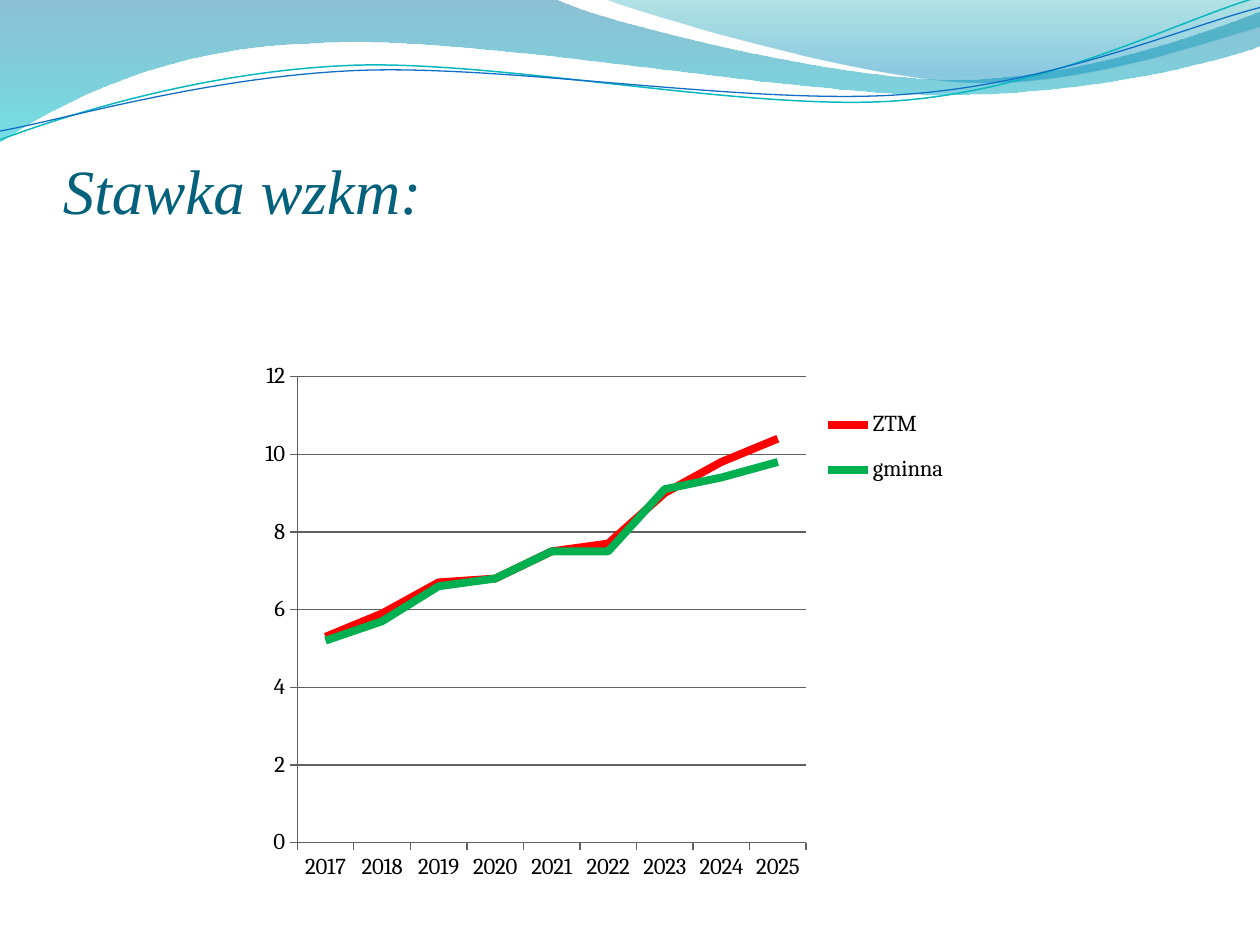
from lxml.etree import SubElement as Sub
from pptx import Presentation
from pptx.chart.data import CategoryChartData as Data
from pptx.dml.color import RGBColor
from pptx.enum.chart import XL_CHART_TYPE as Kind, XL_LEGEND_POSITION as Side, XL_TICK_MARK as Tick
from pptx.enum.text import MSO_ANCHOR as Anchor
from pptx.oxml import parse_xml
from pptx.oxml.ns import nsdecls, qn
from pptx.util import Cm, Pt

BAND = [
    [(0, 0)],
    [(4.4, -0.01)],
    [(4.76, 0.17), (6.64, 0.63), (7.58, 0.63)],
    [(8.53, 0.63), (9.58, 0.26), (10, 0.09)],
    [(10.01, 0.36)],
    [(9.83, 0.44), (8.7, 0.76), (7.46, 0.75)],
    [(6.22, 0.75), (3.82, 0.28), (2.57, 0.34)],
    [(1.29, 0.36), (0.46, 0.83), (-0.01, 1.13)],
    [(0, 0)],
]
CREST = [
    [(4.79, -0.01)],
    [(5.09, 0.11), (6.82, 0.62), (7.69, 0.65)],
    [(8.56, 0.69), (9.61, 0.32), (10, 0.21)],
    [(10, 0)],
    [(4.79, -0.01)],
]
TEAL = [
    [(0, 1.11)],
    [(0.48, 0.93), (1.58, 0.57), (2.77, 0.52)],
    [(3.95, 0.47), (5.93, 0.89), (7.13, 0.8)],
    [(8.33, 0.71), (9.38, 0.15), (9.98, -0.02)],
]
BLUE = [
    [(0, 1.04)],
    [(0.47, 0.96), (1.64, 0.61), (2.83, 0.56)],
    [(4.03, 0.51), (5.97, 0.84), (7.17, 0.75)],
    [(8.36, 0.67), (9.41, 0.21), (10, 0.06)],
]
YEARS = [str(year) for year in range(2017, 2026)]
RATES = [
    ("ZTM", "FF0000", (5.3, 5.9, 6.7, 6.8, 7.5, 7.7, 9, 9.8, 10.4)),
    ("gminna", "00B050", (5.2, 5.7, 6.6, 6.8, 7.5, 7.5, 9.1, 9.4, 9.8)),
]


def hue(code):
    return RGBColor.from_string(code)


def inch(size):
    return Cm(size * 2.54)


def trace(slide, parts, close):
    (start,), *rest = parts
    pen = slide.shapes.build_freeform(inch(start[0]), inch(start[1]))
    dots = [(inch(x), inch(y)) for part in rest for x, y in part]
    pen.add_line_segments(dots, close=close)
    shape = pen.convert_to_shape()
    shape.shadow.inherit = False
    lines = iter(list(shape.element.iter(qn("a:lnTo"))))
    for part in rest:
        group = [next(lines) for dot in part]
        if len(group) == 3:
            first, *others = group
            first.tag = qn("a:cubicBezTo")
            for line in others:
                first.append(line[0])
                line.getparent().remove(line)
    return shape


def add_wave(slide, parts, stops):
    shape = trace(slide, parts, True)
    shape.line.fill.background()
    shape.fill.gradient()
    shape.fill.gradient_angle = 270
    for stop, (place, code, alpha) in zip(shape.fill.gradient_stops, stops):
        stop.position = place
        stop.color.rgb = hue(code)
    tints = shape.element.spPr.iter(qn("a:srgbClr"))
    for tint, (place, code, alpha) in zip(tints, stops):
        Sub(tint, qn("a:alpha"), val=str(alpha * 1000))


def style_line(line, code, width):
    line.color.rgb = hue(code)
    line.width = Pt(width)


def add_curve(slide, parts, code, width):
    shape = trace(slide, parts, False)
    shape.fill.background()
    style_line(shape.line, code, width)


def add_title(slide, text):
    box = slide.shapes.add_textbox(Cm(1.27), Cm(1.95), Cm(22.86), Cm(2.62))
    frame = box.text_frame
    frame.word_wrap = True
    frame.vertical_anchor = Anchor.BOTTOM
    frame.margin_left = frame.margin_right = frame.margin_bottom = 0
    run = frame.paragraphs[0].add_run()
    run.text = text
    font = run.font
    font.name, font.size, font.italic = "Times New Roman", Pt(36), True
    font.color.rgb = hue("04617B")


def place(node, spot, rect, inner=False):
    for old in node.findall(qn("c:layout")):
        node.remove(old)
    tags = [("layoutTarget", "inner")] if inner else []
    tags += [("xMode", "edge"), ("yMode", "edge"), *zip("xywh", rect)]
    body = "".join(f'<c:{tag} val="{val}"/>' for tag, val in tags)
    node.insert(spot, parse_xml(
        f'<c:layout {nsdecls("c")}><c:manualLayout>{body}'
        '</c:manualLayout></c:layout>'))


def add_rates(slide):
    data = Data()
    data.categories = YEARS
    for name, code, vals in RATES:
        data.add_series(name, vals)
    chart = slide.shapes.add_chart(
        Kind.LINE, Cm(3.96), Cm(7.34), Cm(15.88), Cm(11.13), data).chart
    chart.has_title = False
    chart.font.name, chart.font.size = "Cambria", Pt(13)
    chart.font.color.rgb = hue("000000")
    for line, (name, code, vals) in zip(chart.plots[0].series, RATES):
        line.smooth = False
        style_line(line.format.line, code, 4.5)
    chart.plots[0].vary_by_categories = False
    for axis in (chart.category_axis, chart.value_axis):
        axis.major_tick_mark, axis.minor_tick_mark = Tick.OUTSIDE, Tick.NONE
        style_line(axis.format.line, "606060", 0.75)
    scale = chart.value_axis
    scale.minimum_scale, scale.maximum_scale, scale.major_unit = 0, 12, 2
    scale.has_major_gridlines = True
    style_line(scale.major_gridlines.format.line, "606060", 0.75)
    chart.has_legend = True
    chart.legend.position = Side.RIGHT
    chart.legend.include_in_layout = False
    area = chart.element.find(".//" + qn("c:plotArea"))
    place(area, 0, (0.128, 0.022, 0.646, 0.845), True)
    key = chart.element.find(".//" + qn("c:legend"))
    place(key, 1, (0.78, 0.05, 0.19, 0.2))


def main():
    deck = Presentation()
    deck.slide_width, deck.slide_height = Cm(25.4), Cm(19.05)
    slide = deck.slides.add_slide(deck.slide_layouts[6])
    add_wave(slide, BAND, [(0, "0074A1", 45), (1, "00C6CF", 55)])
    add_wave(slide, CREST, [(0, "00A1A9", 30), (0.8, "008BBF", 45)])
    add_curve(slide, TEAL, "0AB8BF", 0.85)
    add_curve(slide, BLUE, "0F6FC6", 0.75)
    add_title(slide, "Stawka wzkm:")
    add_rates(slide)
    deck.save("out.pptx")


if __name__ == "__main__":
    main()
